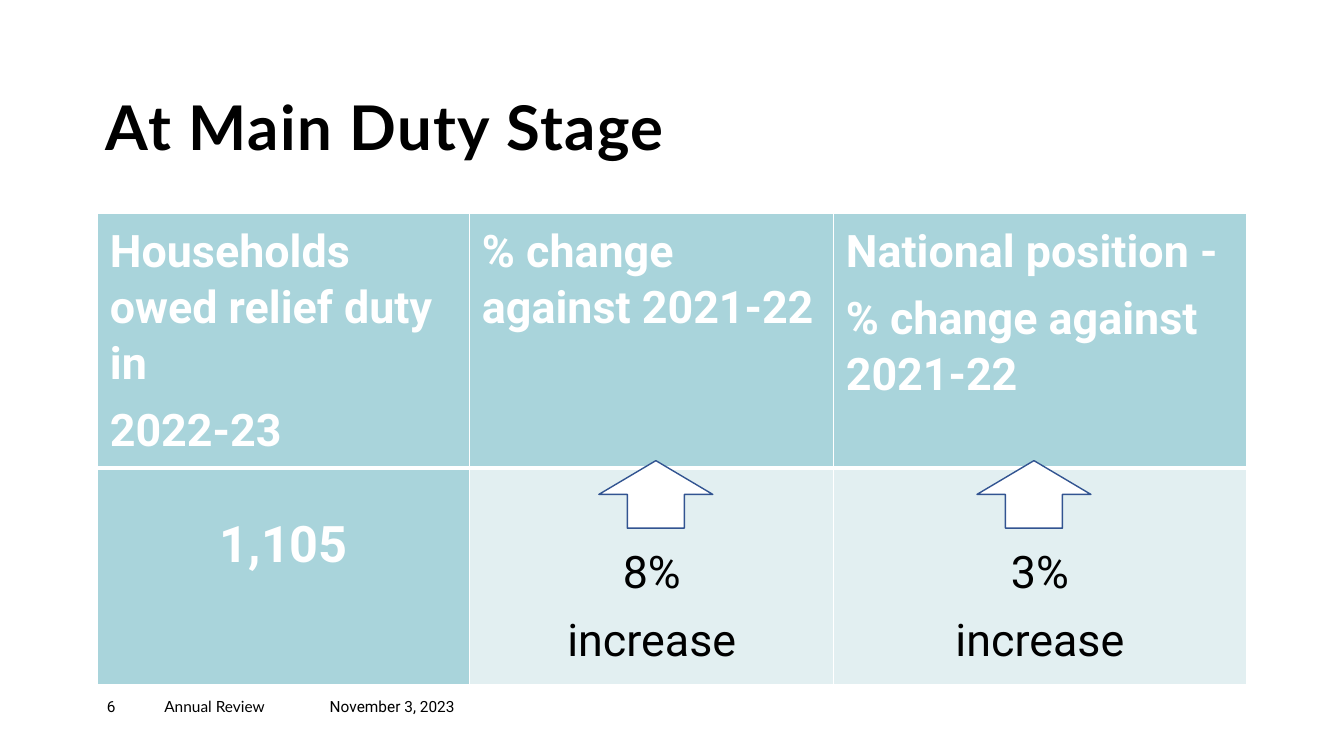
from lxml.etree import SubElement
from pptx import Presentation
from pptx.dml.color import RGBColor
from pptx.enum.shapes import MSO_SHAPE
from pptx.enum.text import MSO_ANCHOR, PP_ALIGN
from pptx.oxml.ns import qn
from pptx.util import Inches, Pt

BLACK = RGBColor(0x00, 0x00, 0x00)
WHITE = RGBColor(0xFF, 0xFF, 0xFF)
TEAL = RGBColor(0xA9, 0xD4, 0xDB)
PALE_TEAL = RGBColor(0xE2, 0xEF, 0xF1)
ARROW_BLUE = RGBColor(0x32, 0x54, 0x91)

COLUMN_WIDTHS = [3.69, 3.61, 4.09]
ROW_HEIGHTS = [2.35, 2.15]
HEADINGS = [
    "Households owed relief duty in\n2022-23",
    "% change against 2021-22",
    "National position -\n% change against 2021-22",
]
RESULTS = ["1,105", "8%\nincrease", "3%\nincrease"]


def format_runs(paragraph, size, color, font="Roboto", bold=False):
    for run in paragraph.runs:
        run.font.name = font
        run.font.size = Pt(size)
        run.font.bold = bold
        run.font.color.rgb = color


def clear_margins(frame):
    frame.margin_left = frame.margin_right = 0
    frame.margin_top = frame.margin_bottom = 0
    frame.word_wrap = True


def add_title(slide, text):
    title = slide.shapes.title
    title.left, title.top = Inches(1.05), Inches(0.96)
    title.width, title.height = Inches(8.84), Inches(0.67)
    frame = title.text_frame
    clear_margins(frame)
    frame.vertical_anchor = MSO_ANCHOR.BOTTOM
    frame.text = text
    heading = frame.paragraphs[0]
    heading.alignment = PP_ALIGN.LEFT
    heading.line_spacing = 0.9
    format_runs(heading, 44, BLACK, "Lato", True)
    heading.runs[0].font._element.set("spc", "100")


def add_footer(slide, text, left, width, font):
    footer = slide.shapes.add_textbox(
        Inches(left), Inches(6.92), Inches(width), Inches(0.27))
    clear_margins(footer.text_frame)
    footer.text_frame.text = text
    format_runs(footer.text_frame.paragraphs[0], 11, BLACK, font)


def set_border(cell, side, width):
    line = SubElement(cell._tc.get_or_add_tcPr(), qn(f"a:{side}"),
                      w=str(Pt(width)))
    fill = SubElement(line, qn("a:solidFill"))
    SubElement(fill, qn("a:srgbClr"), val=str(WHITE))


def fill_cell(cell, text, fill, size, color, bold, centred=False, top=0.08):
    for side in ("lnL", "lnR"):
        set_border(cell, side, 1)
    set_border(cell, "lnT", 3 if centred else 1)
    set_border(cell, "lnB", 1 if centred else 3)
    cell.fill.solid()
    cell.fill.fore_color.rgb = fill
    cell.margin_left = cell.margin_right = Inches(0.12)
    cell.margin_top = Inches(top)
    cell.margin_bottom = Inches(0.05)
    cell.text_frame.text = text
    for paragraph in cell.text_frame.paragraphs:
        paragraph.alignment = PP_ALIGN.CENTER if centred else PP_ALIGN.LEFT
        paragraph.line_spacing = 1.07
        paragraph.space_after = Pt(8)
        format_runs(paragraph, size, color, bold=bold)


def add_duty_table(slide):
    table = slide.shapes.add_table(
        len(ROW_HEIGHTS), len(COLUMN_WIDTHS), Inches(0.97), Inches(2.12),
        Inches(sum(COLUMN_WIDTHS)), Inches(sum(ROW_HEIGHTS))).table
    for column, width in zip(table.columns, COLUMN_WIDTHS):
        column.width = Inches(width)
    for row, height in zip(table.rows, ROW_HEIGHTS):
        row.height = Inches(height)
    for index, (heading, result) in enumerate(zip(HEADINGS, RESULTS)):
        fill_cell(table.cell(0, index), heading, TEAL, 32, WHITE, True)
        households = index == 0
        fill_cell(table.cell(1, index), result,
                  TEAL if households else PALE_TEAL,
                  36 if households else 32,
                  WHITE if households else BLACK,
                  households, True, 0.43 if households else 0.75)


def add_increase_arrow(slide, left):
    arrow = slide.shapes.add_shape(
        MSO_SHAPE.UP_ARROW, Inches(left), Inches(4.57),
        Inches(1.13), Inches(0.67))
    arrow.shadow.inherit = False
    arrow.fill.solid()
    arrow.fill.fore_color.rgb = WHITE
    arrow.line.color.rgb = ARROW_BLUE
    arrow.line.width = Pt(1)


def main():
    deck = Presentation()
    deck.slide_width, deck.slide_height = Inches(13.33), Inches(7.5)
    slide = deck.slides.add_slide(deck.slide_layouts[5])
    add_title(slide, "At Main Duty Stage")
    add_footer(slide, "6", 1.06, 0.57, "Roboto")
    add_footer(slide, "Annual Review", 1.63, 1.64, "Lato")
    add_footer(slide, "November 3, 2023", 3.27, 1.44, "Roboto")
    add_duty_table(slide)
    for left in (5.94, 9.69):
        add_increase_arrow(slide, left)
    deck.save("out.pptx")


if __name__ == "__main__":
    main()
